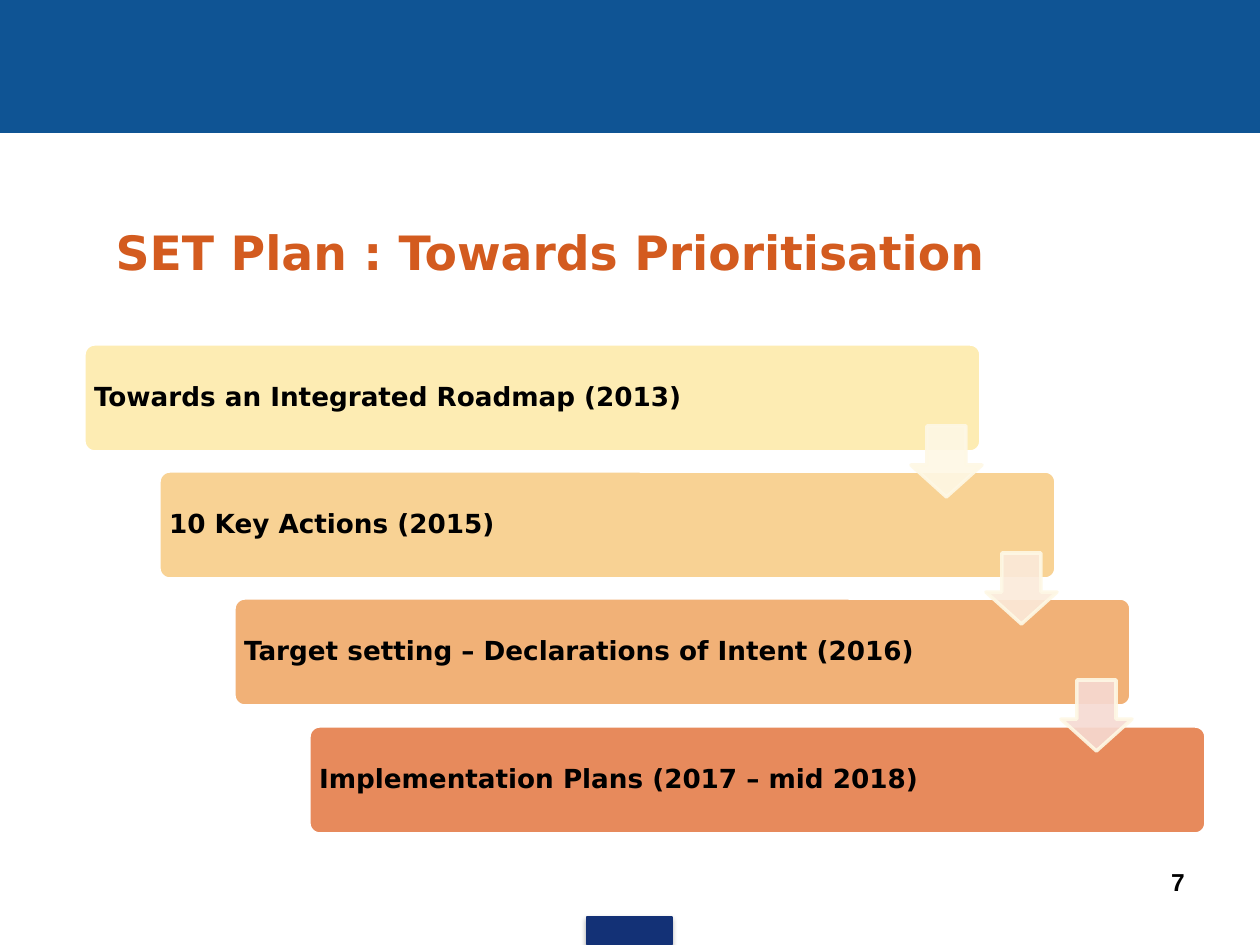
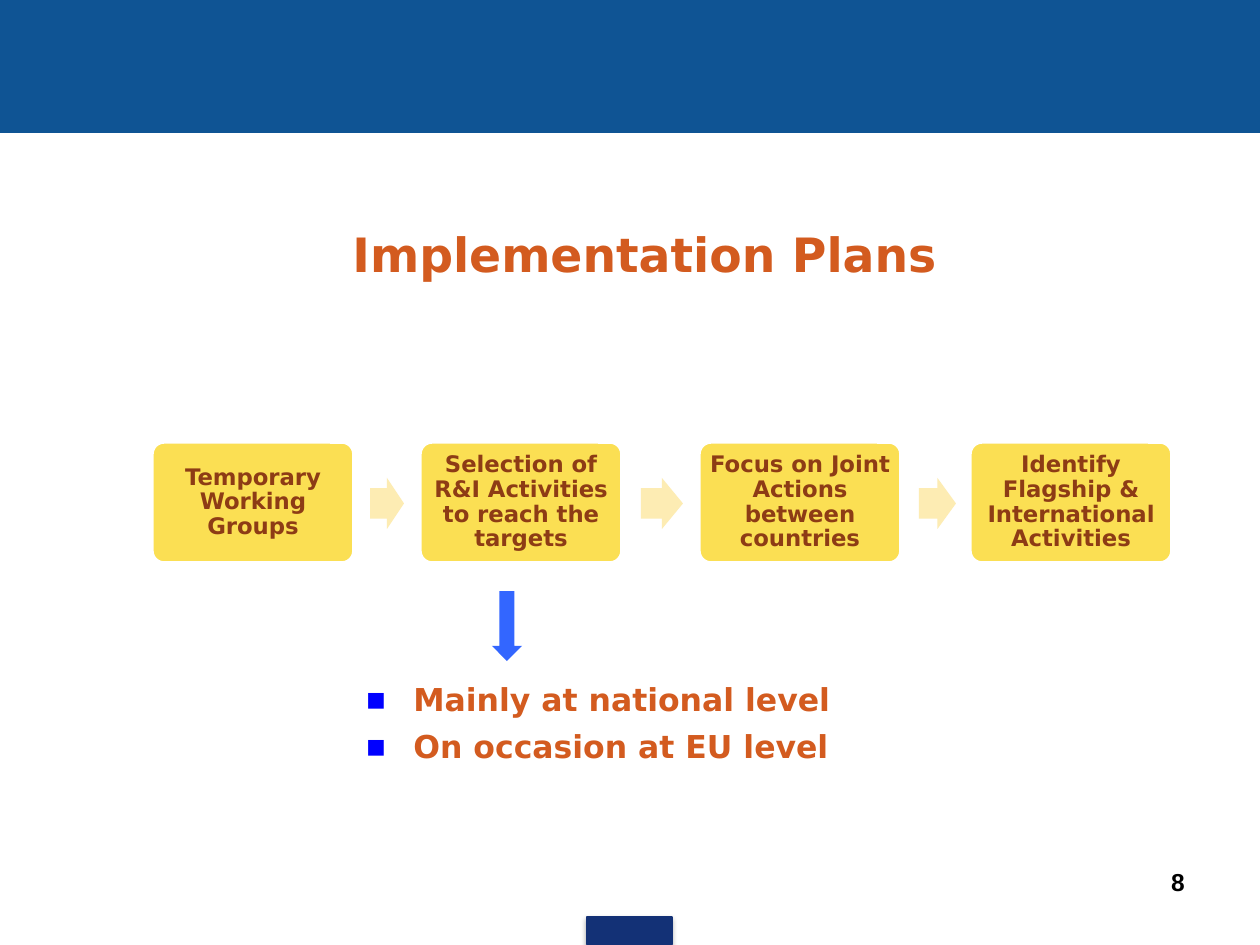
from dataclasses import dataclass
from typing import Optional

import pptx
import pptx.dml.color
import pptx.enum.shapes
import pptx.enum.text
import pptx.oxml
import pptx.oxml.ns
import pptx.util
from lxml import etree

PX = 914400 // 126  # EMU in one px
FONT = "DejaVu Sans"
COLORS = {
    "band": "0F5494",
    "tab": "133176",
    "title": "D35B1F",
    "black": "000000",
    "white": "FFFFFF",
    "brown": "8D3C15",
    "yellow": "FBDF53",
    "cream": "FDECB3",
    "arrow edge": "FEF8E5",
    "blue": "3366FF",
    "bullet": "0000FF",
}
KINDS = pptx.enum.shapes.MSO_SHAPE
ALIGN = pptx.enum.text.PP_ALIGN
MIDDLE = pptx.enum.text.MSO_ANCHOR.MIDDLE


@dataclass
class Area:
    left: int
    top: int
    width: int
    height: int

    def emu(self) -> list[int]:
        return [side * PX for side in (self.left, self.top, self.width, self.height)]


@dataclass
class TextStyle:
    size: int
    color: str
    align: ALIGN = ALIGN.LEFT
    font: str = FONT
    line_spacing: Optional[float] = None


@dataclass
class Stage:
    text: str
    fill: str
    arrow_fill: Optional[str] = None


@dataclass
class Step:
    text: str
    left: int
    arrow_left: int = 0
    arrow_width: int = 0


TITLE = TextStyle(27, COLORS["title"])
CENTRED_TITLE = TextStyle(27, COLORS["title"], ALIGN.CENTER)
STAGE = TextStyle(15, COLORS["black"], line_spacing=0.9)
STEP = TextStyle(13, COLORS["brown"], ALIGN.CENTER, line_spacing=0.9)
LEVEL = TextStyle(18, COLORS["title"])
NUMBER = TextStyle(14, COLORS["black"], ALIGN.RIGHT, "Arial")

STAGES = [
    Stage("Towards an Integrated Roadmap (2013)", "FDECB3", "FEF8E5"),
    Stage("10 Key Actions (2015)", "F8D294", "FBEADA"),
    Stage("Target setting – Declarations of Intent (2016)", "F1B177", "F6DAD2"),
    Stage("Implementation Plans (2017 – mid 2018)", "E78A5C"),
]
STEPS = [
    Step("Temporary Working Groups", 152, 370, 34),
    Step("Selection of R&I Activities to reach the targets", 420, 641, 42),
    Step("Focus on Joint Actions between countries", 699, 919, 37),
    Step("Identify Flagship & International Activities", 970),
]
LEVELS = ["Mainly at national level", "On occasion at EU level"]


def rgb(color: str):
    return pptx.dml.color.RGBColor.from_string(color)


def format_paragraph(para, style: TextStyle) -> None:
    para.alignment = style.align
    if style.line_spacing:
        para.line_spacing = style.line_spacing
    para.font.name = style.font
    para.font.size = pptx.util.Pt(style.size)
    para.font.bold = True
    para.font.color.rgb = rgb(style.color)


def set_indent(para, margin: int, first_line: int) -> None:
    properties = para._p.get_or_add_pPr()
    properties.set("marL", str(margin * PX))
    properties.set("indent", str(first_line * PX))


def add_bullet(para) -> None:
    properties = para._p.get_or_add_pPr()
    color = etree.SubElement(properties, pptx.oxml.ns.qn("a:buClr"))
    etree.SubElement(color, pptx.oxml.ns.qn("a:srgbClr"), val=COLORS["bullet"])
    etree.SubElement(properties, pptx.oxml.ns.qn("a:buFont"), typeface=FONT)
    etree.SubElement(properties, pptx.oxml.ns.qn("a:buChar"), char="▪")


def add_figure(page, kind, area: Area, fill: str, edge: Optional[str] = None,
               edge_width: float = 2, adjustments: tuple = ()):
    shape = page.shapes.add_shape(kind, *area.emu())
    shape.shadow.inherit = False
    shape.fill.solid()
    shape.fill.fore_color.rgb = rgb(fill)
    if edge:
        shape.line.color.rgb = rgb(edge)
        shape.line.width = pptx.util.Pt(edge_width)
    else:
        shape.line.fill.background()
    for index, value in enumerate(adjustments):
        shape.adjustments[index] = value
    return shape


def set_opacity(shape, percent: int) -> None:
    for color in shape.element.spPr.iter(pptx.oxml.ns.qn("a:srgbClr")):
        etree.SubElement(color, pptx.oxml.ns.qn("a:alpha"), val=str(percent * 1000))


def add_tab_shadow(shape) -> None:
    effects = shape.element.spPr.find(pptx.oxml.ns.qn("a:effectLst"))
    shadow = etree.SubElement(
        effects, pptx.oxml.ns.qn("a:outerShdw"), blurRad=str(pptx.util.Pt(3.1)),
        dist=str(pptx.util.Pt(1.8)), dir="5400000", rotWithShape="0")
    color = etree.SubElement(shadow, pptx.oxml.ns.qn("a:srgbClr"), val=COLORS["black"])
    etree.SubElement(color, pptx.oxml.ns.qn("a:alpha"), val="35000")


def add_card(page, area: Area, text: str, fill: str, style: TextStyle, inset: int) -> None:
    card = add_figure(page, KINDS.ROUNDED_RECTANGLE, area, fill, COLORS["white"],
                      adjustments=(0.1,))
    frame = card.text_frame
    frame.word_wrap = True
    frame.vertical_anchor = MIDDLE
    frame.margin_left = frame.margin_right = inset * PX
    frame.margin_top = frame.margin_bottom = inset * PX
    frame.text = text
    format_paragraph(frame.paragraphs[0], style)


def add_text_box(page, area: Area):
    frame = page.shapes.add_textbox(*area.emu()).text_frame
    frame.word_wrap = True
    return frame


def add_page(deck, title: str, title_area: Area, style: TextStyle, number: int):
    page = deck.slides.add_slide(deck.slide_layouts[5])
    # Top band and bottom tab
    add_figure(page, KINDS.RECTANGLE, Area(0, 0, 1260, 132), COLORS["band"],
               COLORS["band"], 0.75)
    tab = add_figure(page, KINDS.RECTANGLE, Area(587, 917, 85, 28), COLORS["tab"],
                     COLORS["tab"], 0.75)
    add_tab_shadow(tab)
    # Title
    holder = page.shapes.title
    holder.left, holder.top, holder.width, holder.height = title_area.emu()
    frame = holder.text_frame
    frame.text = title
    frame.word_wrap = True
    frame.auto_size = pptx.enum.text.MSO_AUTO_SIZE.NONE
    frame.vertical_anchor = MIDDLE
    set_indent(frame.paragraphs[0], 49, 0)
    format_paragraph(frame.paragraphs[0], style)
    # Page number
    frame = add_text_box(page, Area(903, 861, 294, 65))
    frame.text = str(number)
    format_paragraph(frame.paragraphs[0], NUMBER)
    return page


def build_prioritisation(deck) -> None:
    page = add_page(deck, "SET Plan : Towards Prioritisation",
                    Area(54, 202, 1134, 99), TITLE, 7)
    areas = [Area(84 + 75 * index, 344 + 382 * index // 3, 897, 108)
             for index in range(len(STAGES))]
    # Staircase of stages
    for stage, area in zip(STAGES, areas):
        add_card(page, area, stage.text, stage.fill, STAGE, inset=7)
    # Arrows over the right ends
    for stage, area in zip(STAGES, areas):
        if stage.arrow_fill:
            arrow_area = Area(area.left + area.width - 70, area.top + 82, 71, 71)
            arrow = add_figure(page, KINDS.DOWN_ARROW, arrow_area, stage.arrow_fill,
                               COLORS["arrow edge"], adjustments=(0.55, 0.45))
            set_opacity(arrow, 90)


def build_implementation(deck) -> None:
    page = add_page(deck, "Implementation Plans", Area(233, 202, 774, 103),
                    CENTRED_TITLE, 8)
    # Row of steps
    for step in STEPS:
        add_card(page, Area(step.left, 442, 202, 121), step.text, COLORS["yellow"],
                 STEP, inset=6)
        if step.arrow_width:
            add_figure(page, KINDS.RIGHT_ARROW,
                       Area(step.arrow_left, 478, step.arrow_width, 51),
                       COLORS["cream"], adjustments=(0.6, 0.5))
    # Levels of the selected activities
    add_figure(page, KINDS.DOWN_ARROW, Area(492, 591, 30, 70), COLORS["blue"])
    frame = add_text_box(page, Area(353, 674, 605, 123))
    for index, level in enumerate(LEVELS):
        para = frame.add_paragraph() if index else frame.paragraphs[0]
        para.text = level
        set_indent(para, 48, -48)
        add_bullet(para)
        para.space_after = pptx.util.Pt(5)
        format_paragraph(para, LEVEL)


def main() -> None:
    deck = pptx.Presentation()
    deck.slide_width = pptx.util.Inches(10)
    deck.slide_height = pptx.util.Inches(7.5)
    build_prioritisation(deck)
    build_implementation(deck)
    deck.save("out.pptx")


if __name__ == "__main__":
    main()
